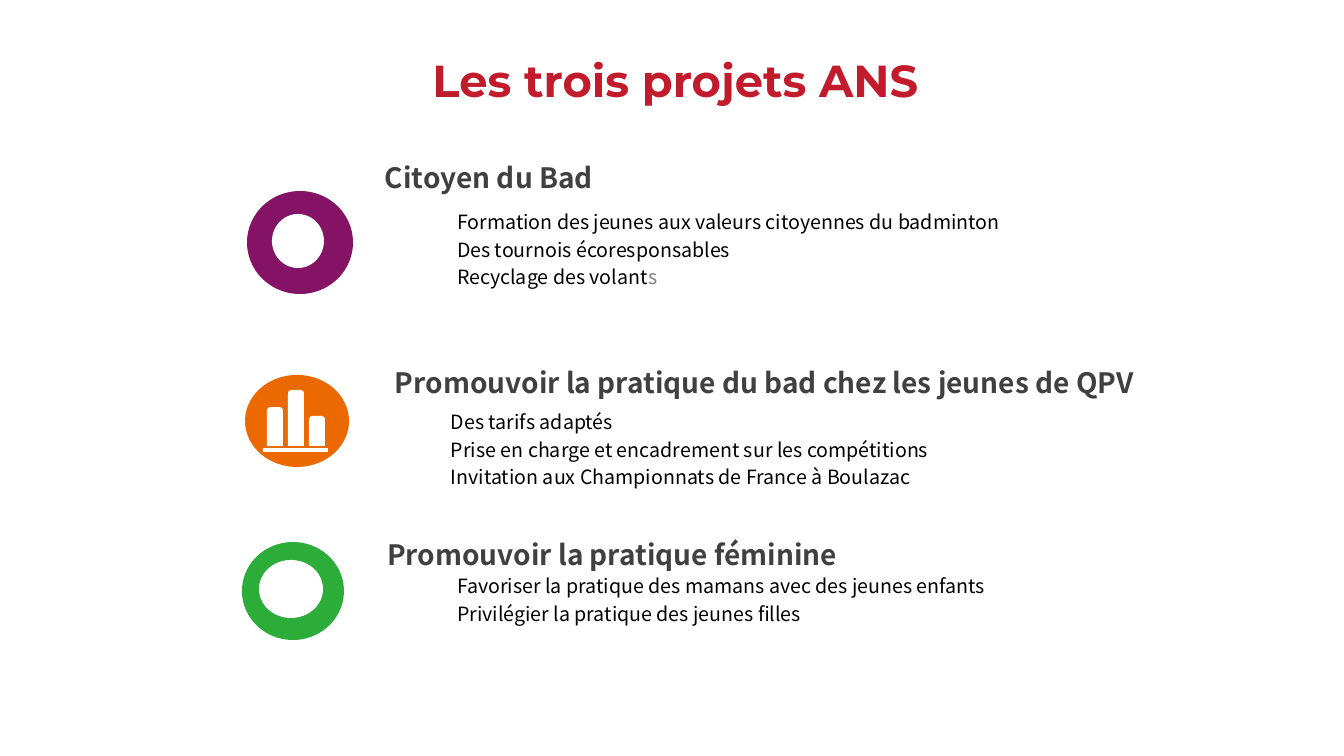
from pptx import Presentation
from pptx.dml.color import RGBColor
from pptx.enum.shapes import MSO_SHAPE
from pptx.enum.text import MSO_ANCHOR, PP_ALIGN
from pptx.util import Pt

OVAL, BAR, BASE = MSO_SHAPE.OVAL, MSO_SHAPE.ROUND_2_SAME_RECTANGLE, MSO_SHAPE.RECTANGLE
TOP, MIDDLE = MSO_ANCHOR.TOP, MSO_ANCHOR.MIDDLE
LEFT, CENTER = PP_ALIGN.LEFT, PP_ALIGN.CENTER

RED = RGBColor(0xC2, 0x1B, 0x2C)
DARK = RGBColor(0x40, 0x40, 0x40)
BLACK = RGBColor(0, 0, 0)
GREY = RGBColor(0x80, 0x80, 0x80)
WHITE = RGBColor(0xFF, 0xFF, 0xFF)
PURPLE = RGBColor(0x85, 0x13, 0x65)
ORANGE = RGBColor(0xEC, 0x69, 0x01)
GREEN = RGBColor(0x2C, 0xAC, 0x39)

TITLE_FONT, BODY_FONT = "Montserrat", "Noto Sans CJK SC"
EMU_PER_PX = 914400 / 100.8

TITLE = "Les trois projets ANS"
PROJECTS = [
    {
        "heading": "Citoyen du Bad", "heading_box": (385, 160, 217, 34),
        "actions": ["Formation des jeunes aux valeurs citoyennes du badminton",
                    "Des tournois écoresponsables",
                    "Recyclage des volants"],
        "actions_box": (457, 210, 665, 112),
        "disc": (247, 191, 106, 103), "colour": PURPLE,
        "symbol": [(OVAL, (272, 214, 52, 54))],
    },
    {
        "heading": "Promouvoir la pratique du bad chez les jeunes de QPV",
        "heading_box": (395, 348, 774, 68),
        "actions": ["Des tarifs adaptés",
                    "Prise en charge et encadrement sur les compétitions",
                    "Invitation aux Championnats de France à Boulazac"],
        "actions_box": (451, 410, 706, 86),
        "disc": (245, 375, 104, 92), "colour": ORANGE,
        "symbol": [(BAR, (267 + 21 * i, 446 - height, 16, height))
                   for i, height in enumerate((39, 56, 30))]
        + [(BASE, (263, 448, 65, 4))],
    },
    {
        "heading": "Promouvoir la pratique féminine",
        "heading_box": (387, 537, 503, 34),
        "actions": ["Favoriser la pratique des mamans avec des jeunes enfants",
                    "Privilégier la pratique des jeunes filles"],
        "actions_box": (457, 574, 608, 57),
        "disc": (242, 542, 102, 98), "colour": GREEN,
        "symbol": [(OVAL, (259, 560, 64, 58))],
    },
]


def px(length):
    return round(length * EMU_PER_PX)


def add_filled(slide, kind, box, colour):
    shape = slide.shapes.add_shape(kind, *map(px, box))
    shape.shadow.inherit = False
    shape.fill.solid()
    shape.fill.fore_color.rgb = colour
    shape.line.fill.background()
    return shape


def add_text(slide, lines, box, font, size, colour, bold=False,
             anchor=MIDDLE, align=LEFT, gap=0):
    frame = slide.shapes.add_textbox(*map(px, box)).text_frame
    frame.word_wrap = True
    frame.vertical_anchor = anchor
    frame.margin_left = frame.margin_right = 0
    frame.margin_top = frame.margin_bottom = 0
    frame.text = "\n".join(lines)
    for index, paragraph in enumerate(frame.paragraphs):
        paragraph.alignment = align
        if index and gap:
            paragraph.space_before = Pt(gap)
        for run in paragraph.runs:
            run.font.name = font
            run.font.size = Pt(size)
            run.font.bold = bold
            run.font.color.rgb = colour
    return frame


def build():
    deck = Presentation()
    deck.slide_width, deck.slide_height = px(1344), px(756)
    slide = deck.slides.add_slide(deck.slide_layouts[6])

    title = add_text(slide, [TITLE], (96, 61, 1159, 45), TITLE_FONT, 32, RED,
                     bold=True, align=CENTER)
    title.paragraphs[0].line_spacing = 0.9

    for project in PROJECTS:
        add_text(slide, [project["heading"]], project["heading_box"],
                 BODY_FONT, 20, DARK, bold=True)
        actions = add_text(slide, project["actions"], project["actions_box"],
                           BODY_FONT, 14, BLACK, anchor=TOP, gap=2.8)
        if project is PROJECTS[0]:
            recycling = actions.paragraphs[-1]
            recycling.runs[0].text = "Recyclage des volant"
            ending = recycling.add_run()
            ending.text = "s"
            ending.font.name = BODY_FONT
            ending.font.size = Pt(14)
            ending.font.color.rgb = GREY
        add_filled(slide, OVAL, project["disc"], project["colour"])
        for kind, box in project["symbol"]:
            mark = add_filled(slide, kind, box, WHITE)
            if kind == BAR:
                mark.adjustments[0] = 0.22

    deck.save("out.pptx")


if __name__ == "__main__":
    build()
